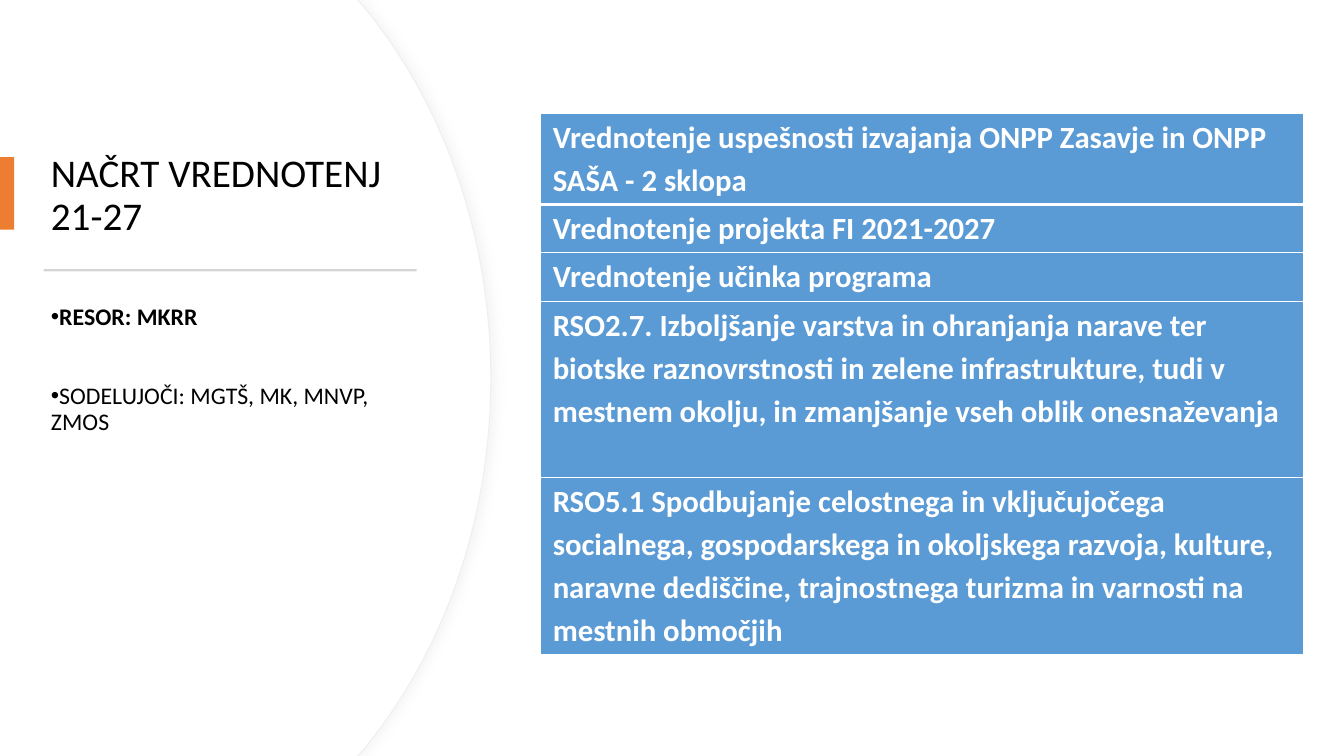
from lxml.etree import SubElement
from pptx import Presentation
from pptx.dml.color import RGBColor
from pptx.enum.shapes import MSO_SHAPE
from pptx.enum.text import MSO_ANCHOR, MSO_AUTO_SIZE, PP_ALIGN
from pptx.oxml import parse_xml
from pptx.oxml.ns import nsdecls, qn
from pptx.util import Cm, Pt


def paint(target, color):
    """Give a fill or a line one solid colour."""
    target.solid()
    target.fore_color.rgb = RGBColor.from_string(color)


def add_span(para, text, size, color, bold=False):
    span = para.add_run()
    span.text = text
    span.font.name = "Calibri"
    span.font.size = Pt(size)
    span.font.bold = bold
    span.font.color.rgb = RGBColor.from_string(color)


deck = Presentation()
deck.slide_width, deck.slide_height = Cm(33.87), Cm(19.05)
page = deck.slides.add_slide(deck.slide_layouts[1])
title, body = page.placeholders

# Rounded panel: the lower half of its edge mirrors the upper half
upper_edge = [(9.02, 0), (9.19, 0.2), (11.15, 2.59), (12.37, 5.89)]
lower_edge = [(x, 19.05 - y) for x, y in reversed(upper_edge)]
edge = upper_edge + [(12.37, 9.53)] + lower_edge

panels = []
for inset in (0, 0.03):
    builder = page.shapes.build_freeform(0, 0, scale=1.0)
    outline = [(Cm(x - inset), Cm(y)) for x, y in edge]
    builder.add_line_segments(outline + [(0, Cm(19.05))], close=True)
    panel = builder.convert_to_shape()

    # Turn each run of three edge points into one curve
    segments = list(panel.element.iter(qn("a:lnTo")))
    for first in (2, 5):
        curve = parse_xml(f'<a:cubicBezTo {nsdecls("a")}/>')
        segments[first].addprevious(curve)
        for segment in segments[first:first + 3]:
            curve.append(segment[0])
            segment.getparent().remove(segment)

    panel.shadow.inherit = False
    paint(panel.fill, "FFFFFF")
    panel.line.fill.background()
    title.element.addprevious(panel.element)
    panels.append(panel)

# Outline and soft shadow of the rear panel
rear = panels[0]
paint(rear.line.fill, "EFEFEF")
rear.line.width = Pt(0.75)
effects = rear.element.spPr.find(qn("a:effectLst"))
effects.append(parse_xml(
    f'<a:outerShdw {nsdecls("a")} blurRad="{Pt(7)}" dist="{Pt(3)}" dir="0">'
    '<a:srgbClr val="D9D9D9"><a:alpha val="25000"/></a:srgbClr></a:outerShdw>'))

# Title
title.left, title.top, title.width, title.height = Cm(1.03), Cm(3.23), Cm(9.55), Cm(3.43)
title.text_frame.vertical_anchor = MSO_ANCHOR.MIDDLE
title.text_frame.auto_size = MSO_AUTO_SIZE.NONE
para = title.text_frame.paragraphs[0]
para.alignment = PP_ALIGN.LEFT
para.line_spacing = 0.9
add_span(para, "NAČRT VREDNOTENJ 21-27", 28, "000000")

# Accent bar and divider
for left, top, width, height, color in [
    (0, 3.96, 0.36, 1.83, "ED7D31"),
    (1.1, 6.78, 9.4, 0.06, "D5D5D5"),
]:
    bar = page.shapes.add_shape(
        MSO_SHAPE.RECTANGLE, Cm(left), Cm(top), Cm(width), Cm(height))
    bar.shadow.inherit = False
    paint(bar.fill, color)
    bar.line.fill.background()

# Bulleted list
body.left, body.top, body.width, body.height = Cm(1.03), Cm(7.55), Cm(9.55), Cm(8.92)
body.text_frame.auto_size = MSO_AUTO_SIZE.NONE
for number, (text, bold, gap) in enumerate([
    ("RESOR: MKRR", True, 10),
    ("SODELUJOČI: MGTŠ, MK, MNVP, ZMOS", False, 38.5),
]):
    para = body.text_frame.add_paragraph() if number else body.text_frame.paragraphs[0]
    para.line_spacing = 0.9
    para.space_before = Pt(gap)
    properties = para._p.get_or_add_pPr()
    properties.set("marL", "0")
    properties.set("indent", str(-Cm(0.64)))
    SubElement(properties, qn("a:buFont"), typeface="Arial")
    SubElement(properties, qn("a:buChar"), char="•")
    add_span(para, text, 17, "000000", bold)

# Table of evaluations: row height and text
evaluations = [
    (2.29, "Vrednotenje uspešnosti izvajanja ONPP Zasavje in ONPP SAŠA - 2 sklopa"),
    (1.22, "Vrednotenje projekta FI 2021-2027"),
    (1.22, "Vrednotenje učinka programa"),
    (4.45, "RSO2.7. Izboljšanje varstva in ohranjanja narave ter biotske raznovrstnosti "
           "in zelene infrastrukture, tudi v mestnem okolju, in zmanjšanje vseh oblik "
           "onesnaževanja"),
    (4.45, "RSO5.1 Spodbujanje celostnega in vključujočega socialnega, gospodarskega in "
           "okoljskega razvoja, kulture, naravne dediščine, trajnostnega turizma in "
           "varnosti na mestnih območjih"),
]
table = page.shapes.add_table(
    len(evaluations), 1, Cm(13.62), Cm(2.86), Cm(19.23), Cm(13.63)).table
for number, (height, text) in enumerate(evaluations):
    table.rows[number].height = Cm(height)
    cell = table.cell(number, 0)
    cell.margin_left = cell.margin_right = Cm(0.31)
    cell.margin_top = cell.margin_bottom = 0

    # White borders, thicker around the line under the first row
    properties = cell._tc.get_or_add_tcPr()
    for side in ("lnL", "lnR", "lnT", "lnB"):
        thick = (number, side) in [(0, "lnB"), (1, "lnT")]
        border = SubElement(properties, qn(f"a:{side}"), w=str(Pt(3 if thick else 1)))
        SubElement(SubElement(border, qn("a:solidFill")), qn("a:srgbClr"), val="FFFFFF")
    paint(cell.fill, "5B9BD5")

    para = cell.text_frame.paragraphs[0]
    para.line_spacing = 1.15
    add_span(para, text, 22, "FFFFFF", True)

deck.save("out.pptx")
